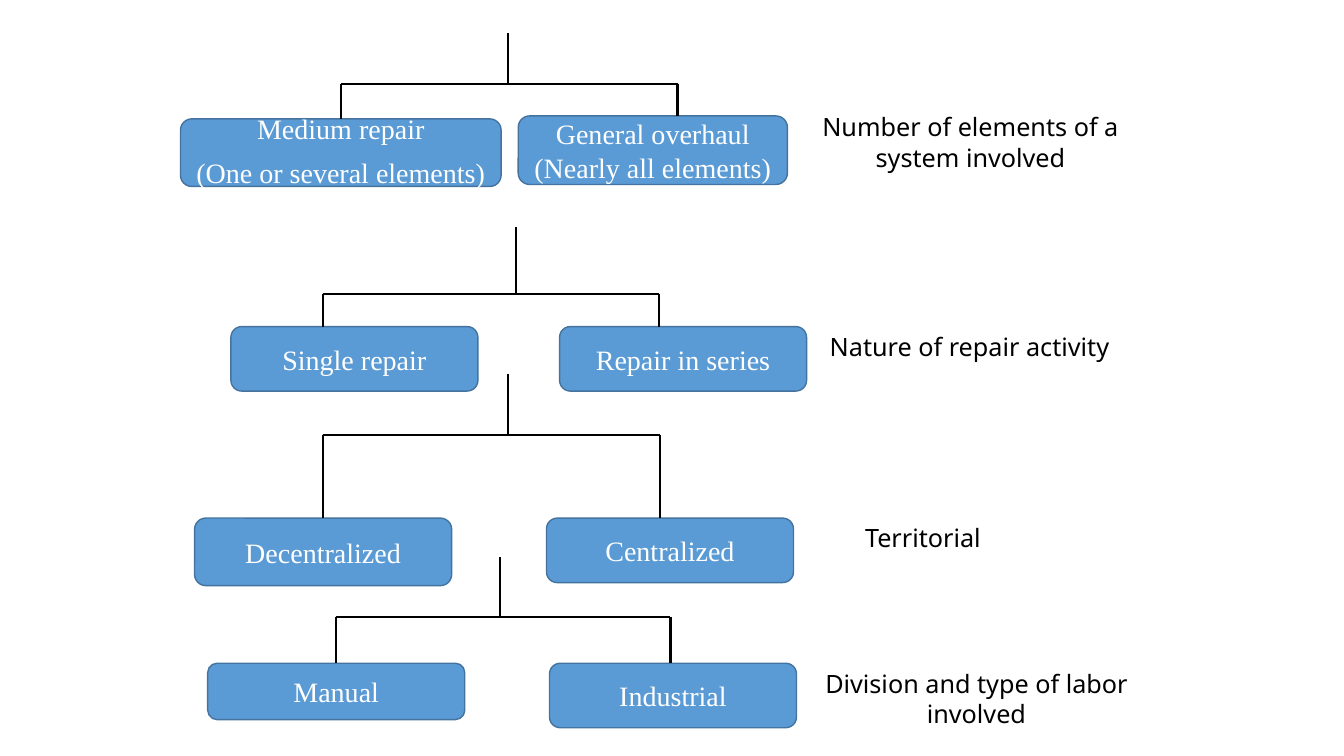
from lxml.etree import SubElement
from pptx import Presentation
from pptx.dml.color import RGBColor
from pptx.enum.shapes import MSO_CONNECTOR, MSO_SHAPE
from pptx.enum.text import MSO_ANCHOR, MSO_AUTO_SIZE, PP_ALIGN
from pptx.oxml import parse_xml
from pptx.oxml.ns import nsdecls, qn
from pptx.util import Inches, Pt

BOX_FILL, BOX_LINE, WHITE, BLACK = "5B9BD5", "43739E", "FFFFFF", "000000"

LEVELS = [
    dict(stem=(5.04, 0.33), bar=(3.38, 6.72, 0.83),
         left=("Medium repair\n(One or several elements)", 1.79, 1.18, 3.18, 0.67),
         right=("General overhaul\n(Nearly all elements)", 5.14, 1.15, 2.67, 0.68),
         label=("Number of elements of a system involved", 7.96, 1.06, 3.33, 0.71)),
    dict(stem=(5.12, 2.25), bar=(3.2, 6.54, 2.92),
         left=("Single repair", 2.29, 3.24, 2.45, 0.64),
         right=("Repair in series", 5.55, 3.24, 2.45, 0.64),
         label=("Nature of repair activity", 7.87, 3.24, 3.49, 0.71)),
    dict(stem=(5.04, 3.71), bar=(3.2, 6.55, 4.32),
         left=("Decentralized", 1.93, 5.14, 2.55, 0.67),
         right=("Centralized", 5.42, 5.14, 2.45, 0.64),
         label=("Territorial", 7.96, 5.13, 3.33, 0.4)),
    dict(stem=(4.96, 5.53), bar=(3.33, 6.65, 6.12),
         left=("Manual", 2.06, 6.58, 2.55, 0.56),
         right=("Industrial", 5.45, 6.58, 2.45, 0.64),
         label=("Division and type of labor involved", 8.02, 6.58, 3.33, 0.71)),
]


def color(value):
    return RGBColor.from_string(value)


def style_paragraph(paragraph, font_name, size, font_color):
    paragraph.alignment = PP_ALIGN.CENTER
    paragraph.font.name = font_name
    paragraph.font.size = Pt(size)
    paragraph.font.color.rgb = color(font_color)


def style_box(box):
    box.fill.solid()
    box.fill.fore_color.rgb = color(BOX_FILL)
    box.line.color.rgb = color(BOX_LINE)
    box.line.width = Pt(1)
    frame = box.text_frame
    frame.word_wrap = True
    frame.vertical_anchor = MSO_ANCHOR.MIDDLE
    for paragraph in frame.paragraphs:
        style_paragraph(paragraph, "Times New Roman", 20, WHITE)


def fill_body(body, text, *place):
    body.left, body.top, body.width, body.height = map(Inches, place)
    body.element.spPr.find(qn("a:xfrm")).addnext(parse_xml(
        f'<a:prstGeom {nsdecls("a")} prst="roundRect"><a:avLst/></a:prstGeom>'))
    frame = body.text_frame
    frame.text = text
    frame.auto_size = MSO_AUTO_SIZE.NONE
    for number, paragraph in enumerate(frame.paragraphs):
        properties = paragraph._p.get_or_add_pPr()
        properties.set("marL", "0")
        properties.set("indent", "0")
        SubElement(properties, qn("a:buNone"))
        paragraph.line_spacing = 0.9
        paragraph.space_before = Pt(10 if number else 0)
    style_box(body)
    return body


def add_box(slide, text, *place):
    box = slide.shapes.add_shape(MSO_SHAPE.ROUNDED_RECTANGLE, *map(Inches, place))
    box.shadow.inherit = False
    box.text_frame.paragraphs[0].text = text
    style_box(box)
    return box


def add_label(slide, text, *place):
    label = slide.shapes.add_textbox(*map(Inches, place))
    frame = label.text_frame
    frame.word_wrap = True
    frame.auto_size = MSO_AUTO_SIZE.SHAPE_TO_FIT_TEXT
    paragraph = frame.paragraphs[0]
    paragraph.text = text
    style_paragraph(paragraph, "Noto Sans", 18, BLACK)
    if text == "Territorial":
        paragraph.alignment = PP_ALIGN.LEFT
        frame.margin_left = Inches(0.62)


def add_line(slide, x1, y1, x2, y2):
    line = slide.shapes.add_connector(
        MSO_CONNECTOR.STRAIGHT, *map(Inches, (x1, y1, x2, y2)))
    line.line.color.rgb = color(BLACK)
    line.line.width = Pt(1.5)
    SubElement(line.element.spPr, qn("a:effectLst"))
    return line


def add_drop(slide, x, bar_y, box):
    drop = add_line(slide, x, bar_y, x, box.top.inches)
    middle = box.left + box.width // 2
    if abs(middle - Inches(x)) < Inches(0.01):
        drop.begin_x = middle
        drop.end_connect(box, 0)


def add_level(slide, left_box, stem, bar, right, label):
    right_box = add_box(slide, *right)
    add_label(slide, *label)
    stem_x, stem_top = stem
    bar_left, bar_right, bar_y = bar
    add_line(slide, stem_x, stem_top, stem_x, bar_y)
    add_line(slide, bar_left, bar_y, bar_right, bar_y)
    add_drop(slide, bar_left, bar_y, left_box)
    add_drop(slide, bar_right, bar_y, right_box)


def main():
    presentation = Presentation()
    presentation.slide_width = Inches(13.33)
    presentation.slide_height = Inches(7.5)
    slide = presentation.slides.add_slide(presentation.slide_layouts[1])
    title = slide.shapes.title.element
    title.getparent().remove(title)
    body = slide.placeholders[1]
    for number, level in enumerate(LEVELS):
        left = level["left"]
        left_box = add_box(slide, *left) if number else fill_body(body, *left)
        add_level(slide, left_box, level["stem"], level["bar"],
                  level["right"], level["label"])
    presentation.save("out.pptx")


if __name__ == "__main__":
    main()
